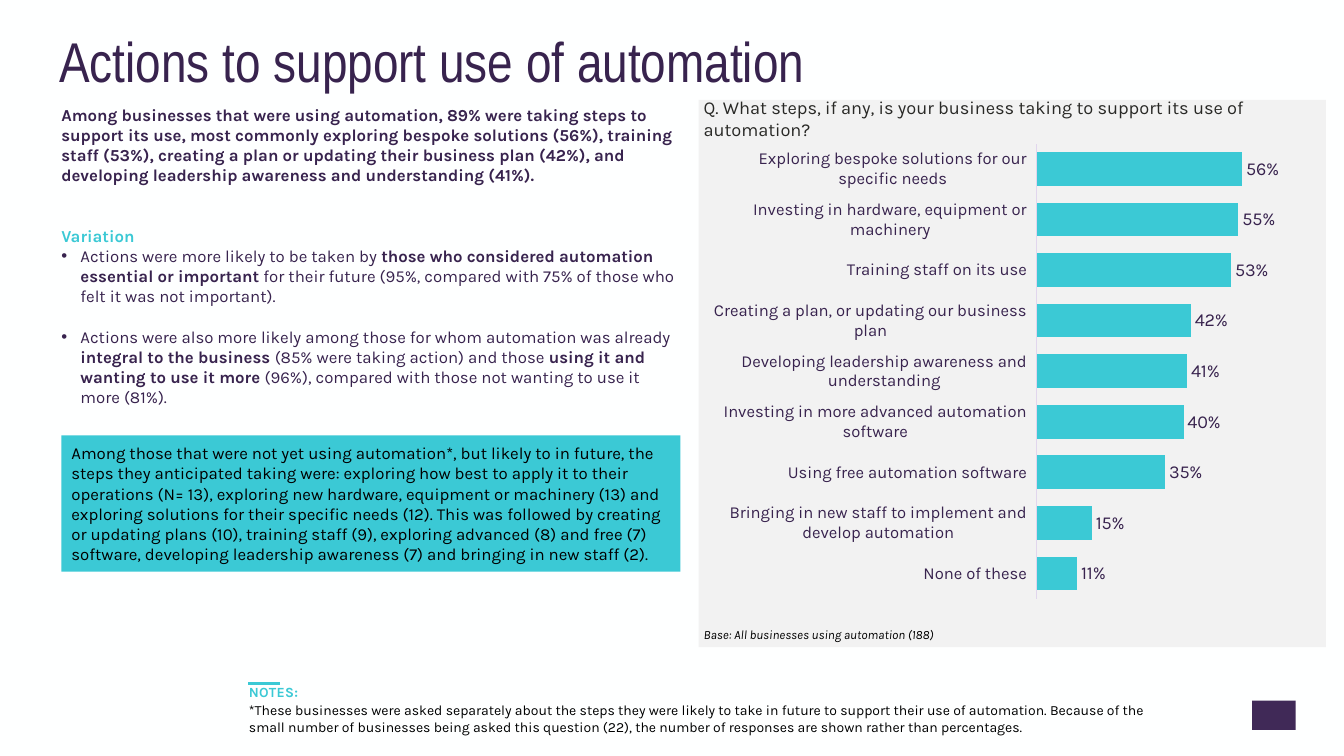
"""Build the slide on actions that support the use of automation."""
from dataclasses import dataclass

from lxml import etree
from pptx import Presentation
from pptx.chart.data import CategoryChartData
from pptx.dml.color import RGBColor
from pptx.enum.chart import XL_CHART_TYPE, XL_LABEL_POSITION, XL_TICK_LABEL_POSITION, XL_TICK_MARK
from pptx.enum.shapes import MSO_CONNECTOR, MSO_SHAPE
from pptx.enum.text import MSO_ANCHOR, PP_ALIGN
from pptx.oxml import parse_xml
from pptx.oxml.ns import nsdecls, qn
from pptx.util import Inches, Pt

BAR, OUTSIDE = XL_CHART_TYPE.BAR_CLUSTERED, XL_LABEL_POSITION.OUTSIDE_END
NO_TICK, LOW = XL_TICK_MARK.NONE, XL_TICK_LABEL_POSITION.LOW
RECTANGLE, STRAIGHT = MSO_SHAPE.RECTANGLE, MSO_CONNECTOR.STRAIGHT
TOP, MIDDLE, LEFT = MSO_ANCHOR.TOP, MSO_ANCHOR.MIDDLE, PP_ALIGN.LEFT


@dataclass(frozen=True)
class Theme:
    paper: str = "FEFFFF"
    purple: str = "38234E"
    badge: str = "402957"
    teal: str = "3BC9D5"
    panel: str = "F2F2F2"
    axis: str = "E1D6ED"
    question: str = "292926"
    black: str = "000000"
    title_font: str = "Arial Narrow"
    body_font: str = "Karla"
    chart_font: str = "Calibri"
    title_size: float = 40
    chart_size: float = 13
    body_size: float = 12
    note_size: float = 10
    base_size: float = 9


THEME = Theme()

TITLE = "Actions to support use of automation"
SUMMARY = (
    "Among businesses that were using automation, 89% were taking steps to support its use, "
    "most commonly exploring bespoke solutions (56%), training staff (53%), creating a plan or "
    "updating their business plan (42%), and developing leadership awareness and understanding (41%)."
)
VARIATION = "Variation"
FINDINGS = [
    [
        ("Actions were more likely to be taken by ", False),
        ("those who considered automation essential or important", True),
        (" for their future (95%, compared with 75% of those who felt it was not important).", False),
    ],
    [
        ("Actions were also more likely among those for whom automation was already ", False),
        ("integral to the business ", True),
        ("(85% were taking action) and those ", False),
        ("using it and wanting to use it more ", True),
        ("(96%), compared with those not wanting to use it more (81%).", False),
    ],
]
FUTURE_USERS = (
    "Among those that were not yet using automation*, but likely to in future, the steps they "
    "anticipated taking were: exploring how best to apply it to their operations (N= 13), exploring "
    "new hardware, equipment or machinery (13) and exploring solutions for their specific needs (12). "
    "This was followed by creating or updating plans (10), training staff (9), exploring advanced (8) "
    "and free (7) software, developing leadership awareness (7) and bringing in new staff (2)."
)
QUESTION = "Q. What steps, if any, is your business taking to support its use of automation?"
BASE = "Base: All businesses using automation (188)"
STEPS = [
    ("Exploring bespoke solutions for our specific needs", 0.56),
    ("Investing in hardware, equipment or machinery", 0.55),
    ("Training staff on its use", 0.53),
    ("Creating a plan, or updating our business plan", 0.42),
    ("Developing leadership awareness and understanding", 0.41),
    ("Investing in more advanced automation software", 0.40),
    ("Using free automation software", 0.35),
    ("Bringing in new staff to implement and develop automation", 0.15),
    ("None of these", 0.11),
]
PLOT = {"x": 0.552, "y": 0.001, "w": 0.384, "h": 0.961}
NOTES_HEADING = "NOTES:"
NOTES = (
    "*These businesses were asked separately about the steps they were likely to take in future to "
    "support their use of automation. Because of the small number of businesses being asked this "
    "question (22), the number of responses are shown rather than percentages."
)


def colour(code):
    return RGBColor.from_string(code)


def style(font, size, code, name=THEME.body_font, bold=False, italic=False):
    font.size, font.name, font.bold, font.italic = Pt(size), name, bold, italic
    font.color.rgb = colour(code)


def add_span(para, text, size, code, **options):
    span = para.add_run()
    span.text = text
    style(span.font, size, code, **options)
    return span


def set_frame(box, anchor):
    frame = box.text_frame
    frame.word_wrap = True
    frame.vertical_anchor = anchor
    frame.paragraphs[0].alignment = LEFT
    return frame


def add_text(page, area, anchor=TOP):
    return set_frame(page.shapes.add_textbox(*map(Inches, area)), anchor)


def add_panel(page, area, code):
    panel = page.shapes.add_shape(RECTANGLE, *map(Inches, area))
    panel.shadow.inherit = False
    panel.fill.solid()
    panel.fill.fore_color.rgb = colour(code)
    panel.line.fill.background()
    return panel


def add_bullet(para):
    properties = para._p.get_or_add_pPr()
    properties.set("marL", str(Inches(0.19)))
    properties.set("indent", str(-Inches(0.19)))
    properties.append(parse_xml(f'<a:buFont {nsdecls("a")} typeface="Arial"/>'))
    properties.append(parse_xml(f'<a:buChar {nsdecls("a")} char="•"/>'))


def add_findings(page):
    size = THEME.body_size
    frame = add_text(page, (0.51, 0.99, 6.34, 2.93))
    add_span(frame.paragraphs[0], SUMMARY, size, THEME.purple, bold=True)
    heading = frame.add_paragraph()
    heading.space_before = Pt(28.8)
    add_span(heading, VARIATION, size, THEME.teal, bold=True)
    for index, finding in enumerate(FINDINGS):
        para = frame.add_paragraph()
        para.space_before = Pt(14.4 * index)
        add_bullet(para)
        for text, bold in finding:
            add_span(para, text, size, THEME.purple, bold=bold)


def add_steps_chart(page):
    data = CategoryChartData(number_format="0%")
    data.categories = [step for step, share in STEPS]
    data.add_series("Series 1", [share for step, share in STEPS])
    area = map(Inches, (7.08, 1.42, 5.75, 4.7))
    chart = page.shapes.add_chart(BAR, *area, data).chart
    chart.has_legend = chart.has_title = False
    style(chart.font, THEME.chart_size, THEME.purple, THEME.chart_font)

    steps_axis, share_axis = chart.category_axis, chart.value_axis
    steps_axis.reverse_order = True
    steps_axis.major_tick_mark = steps_axis.minor_tick_mark = NO_TICK
    steps_axis.tick_label_position = LOW
    steps_axis.format.line.color.rgb = colour(THEME.axis)
    steps_axis.format.line.width = Pt(0.75)
    style(steps_axis.tick_labels.font, THEME.body_size, THEME.purple)
    share_axis.minimum_scale, share_axis.maximum_scale = 0, 0.6
    share_axis.has_major_gridlines = share_axis.visible = False

    plot = chart.plots[0]
    plot.gap_width, plot.vary_by_categories = 50, False
    bars = plot.series[0]
    bars.format.fill.solid()
    bars.format.fill.fore_color.rgb = colour(THEME.teal)
    labels = bars.data_labels
    labels.show_value, labels.position = True, OUTSIDE
    labels.number_format, labels.number_format_is_linked = "0%", False
    style(labels.font, THEME.chart_size, THEME.purple)

    plot_area = chart._chartSpace.chart.plotArea
    for old in plot_area.findall(qn("c:layout")):
        plot_area.remove(old)
    layout = etree.Element(qn("c:layout"))
    manual = etree.SubElement(layout, qn("c:manualLayout"))
    settings = {"layoutTarget": "inner", "xMode": "edge", "yMode": "edge", **PLOT}
    for name, value in settings.items():
        etree.SubElement(manual, qn(f"c:{name}"), val=str(value))
    plot_area.insert(0, layout)


def add_notes(page):
    frame = add_text(page, (2.46, 6.82, 9.2, 0.61))
    frame.margin_left = frame.margin_right = frame.margin_bottom = 0
    frame.margin_top = Inches(0.01)
    heading, note = frame.paragraphs[0], frame.add_paragraph()
    heading.line_spacing, note.space_before = Pt(8.2), Pt(1)
    for para in (heading, note):
        para._p.get_or_add_pPr().set("marL", str(Inches(0.01)))
    span = add_span(heading, NOTES_HEADING, THEME.note_size, THEME.teal, bold=True)
    span.font._element.set("spc", "20")
    add_span(note, NOTES, THEME.note_size, THEME.black)
    ends = map(Inches, (2.46, 6.78, 2.78, 6.78))
    rule = page.shapes.add_connector(STRAIGHT, *ends)
    rule.line.color.rgb, rule.line.width = colour(THEME.teal), Pt(2)
    etree.SubElement(rule._element.spPr, qn("a:effectLst"))


def main():
    deck = Presentation()
    deck.slide_width, deck.slide_height = Inches(13.33), Inches(7.5)
    page = deck.slides.add_slide(deck.slide_layouts[6])
    page.background.fill.solid()
    page.background.fill.fore_color.rgb = colour(THEME.paper)

    add_panel(page, (12.42, 6.95, 0.43, 0.29), THEME.badge)
    title = add_text(page, (0.49, 0.25, 11.5, 0.77), MIDDLE).paragraphs[0]
    title.line_spacing = 0.9
    add_span(title, TITLE, THEME.title_size, THEME.purple, name=THEME.title_font)

    add_panel(page, (6.93, 0.99, 6.22, 5.43), THEME.panel)
    base = add_text(page, (6.88, 6.18, 5, 0.23), MIDDLE).paragraphs[0]
    add_span(base, BASE, THEME.base_size, THEME.black, italic=True)
    question = add_text(page, (6.88, 0.98, 6.45, 0.39), MIDDLE).paragraphs[0]
    add_span(question, QUESTION, THEME.chart_size, THEME.question)
    add_steps_chart(page)

    add_findings(page)
    callout = set_frame(add_panel(page, (0.61, 4.32, 6.14, 1.35), THEME.teal), MIDDLE)
    add_span(callout.paragraphs[0], FUTURE_USERS, THEME.body_size, THEME.black)
    add_notes(page)
    deck.save("out.pptx")


if __name__ == "__main__":
    main()
